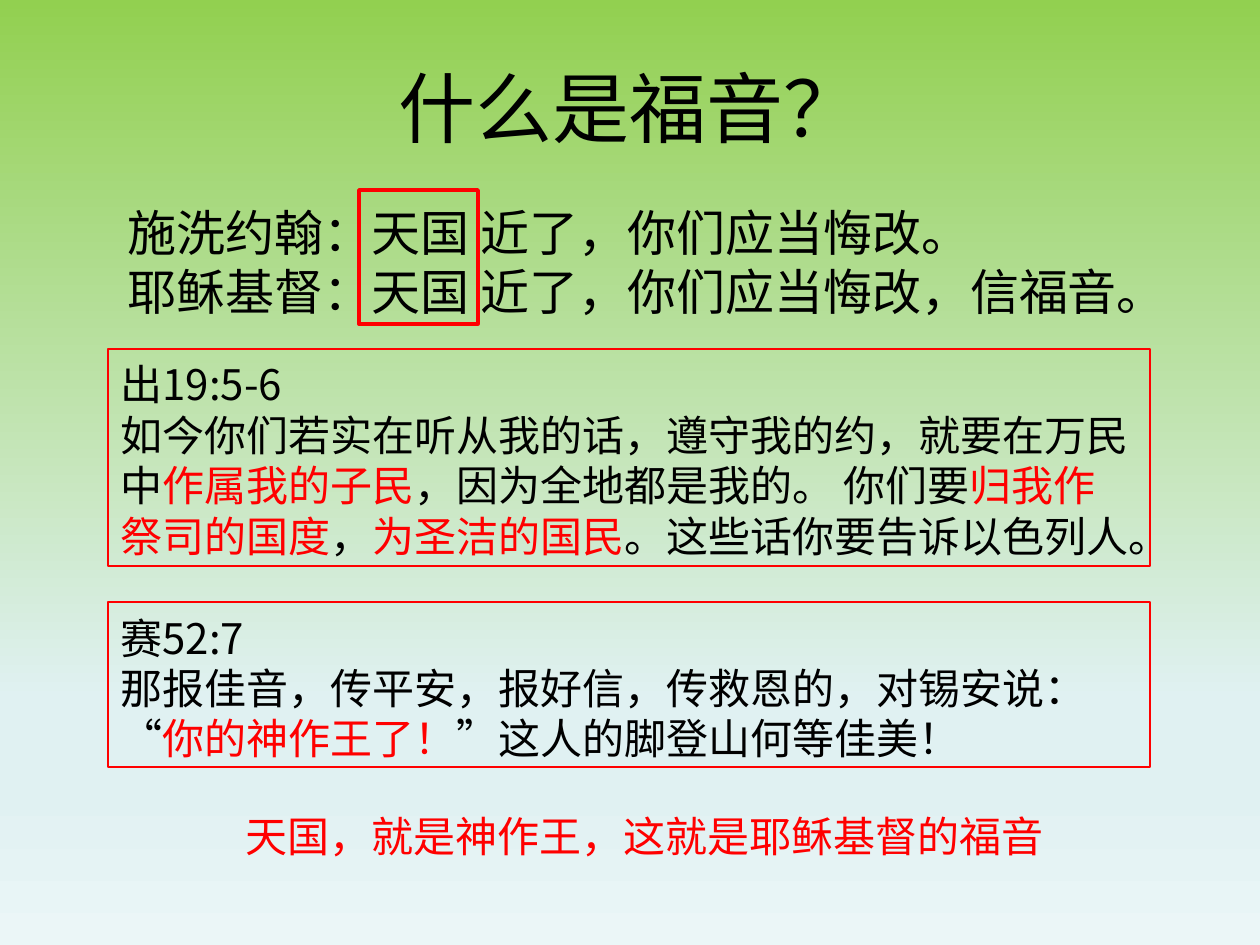
from dataclasses import dataclass

from lxml import etree
from pptx import Presentation
from pptx.dml.color import RGBColor
from pptx.enum.shapes import MSO_SHAPE
from pptx.enum.text import MSO_ANCHOR, PP_ALIGN
from pptx.oxml.ns import qn
from pptx.shapes.autoshape import Shape
from pptx.slide import Slide
from pptx.util import Emu, Pt

RECTANGLE = MSO_SHAPE.RECTANGLE
TOP, MIDDLE = MSO_ANCHOR.TOP, MSO_ANCHOR.MIDDLE
LEFT, CENTER = PP_ALIGN.LEFT, PP_ALIGN.CENTER

BLACK = RGBColor(0x00, 0x00, 0x00)
RED = RGBColor(0xFF, 0x00, 0x00)
GREEN = RGBColor(0x92, 0xD0, 0x50)
PALE_BLUE = RGBColor(0xE0, 0xF1, 0xF2)
ICE = RGBColor(0xEB, 0xF6, 0xF7)
BACKGROUND_STOPS = [(0, GREEN), (74, PALE_BLUE), (83, PALE_BLUE), (100, ICE)]

FONT = "Noto Sans CJK SC"
LINE_HEIGHT = 1.2
EMU_PER_PX = 914400 / 126


@dataclass(frozen=True)
class Box:
    left: int
    top: int
    width: int
    height: int


@dataclass(frozen=True)
class Verse:
    """A framed quotation; every second part of the passage is stressed."""
    box: Box
    reference: str
    passage: list[str]


VERSES = [
    Verse(Box(108, 349, 1042, 217), "出19:5-6", [
        "如今你们若实在听从我的话，遵守我的约，就要在万民中",
        "作属我的子民", "，因为全地都是我的。 你们要",
        "归我作祭司的国度", "，",
        "为圣洁的国民", "。这些话你要告诉以色列人。"]),
    Verse(Box(108, 602, 1042, 165), "赛52:7", [
        "那报佳音，传平安，报好信，传救恩的，对锡安说：“",
        "你的神作王了！", "”这人的脚登山何等佳美！"]),
]


def px(length: int) -> Emu:
    return Emu(round(length * EMU_PER_PX))


def place(box: Box) -> tuple[Emu, Emu, Emu, Emu]:
    return px(box.left), px(box.top), px(box.width), px(box.height)


def write(shape: Shape, paragraphs: list[list[str]], *, size: int,
          color: RGBColor = BLACK, stress: RGBColor = RED,
          align: PP_ALIGN = LEFT, anchor: MSO_ANCHOR = TOP,
          inset: int = 10, fixed_lines: bool = True) -> None:
    """Fill a shape with paragraphs whose runs alternate color and stress."""
    frame = shape.text_frame
    frame.word_wrap = True
    frame.vertical_anchor = anchor
    frame.margin_top = px(inset)
    for index, parts in enumerate(paragraphs):
        paragraph = frame.paragraphs[0] if index == 0 else frame.add_paragraph()
        paragraph.alignment = align
        if fixed_lines:
            paragraph.line_spacing = Pt(size * LINE_HEIGHT)
        for number, part in enumerate(parts):
            run = paragraph.add_run()
            run.text = part
            run.font.size = Pt(size)
            run.font.name = FONT
            run.font.color.rgb = stress if number % 2 else color
            properties = run._r.get_or_add_rPr()
            properties.set("lang", "zh-CN")
            latin = properties.find(qn("a:latin"))
            east_asian = etree.Element(qn("a:ea"), typeface=FONT)
            latin.addnext(east_asian)


def add_text(slide: Slide, box: Box) -> Shape:
    return slide.shapes.add_textbox(*place(box))


def add_frame(slide: Slide, box: Box, line_width: float) -> Shape:
    frame = slide.shapes.add_shape(RECTANGLE, *place(box))
    frame.shadow.inherit = False
    frame.fill.background()
    frame.line.color.rgb = RED
    frame.line.width = Pt(line_width)
    return frame


def paint_background(slide: Slide) -> None:
    fill = slide.background.fill
    fill.gradient()
    fill.gradient_angle = 270
    stops = slide.background._cSld.find(".//" + qn("a:gsLst"))
    for stop in list(stops):
        stops.remove(stop)
    for percent, color in BACKGROUND_STOPS:
        stop = etree.SubElement(stops, qn("a:gs"), pos=str(percent * 1000))
        etree.SubElement(stop, qn("a:srgbClr"), val=str(color))


def main() -> None:
    presentation = Presentation()
    presentation.slide_width = px(1260)
    presentation.slide_height = px(945)
    slide = presentation.slides.add_slide(presentation.slide_layouts[6])
    paint_background(slide)

    # Title
    title = add_text(slide, Box(63, 38, 1134, 137))
    write(title, [["什么是福音？"]], size=44, align=CENTER, anchor=MIDDLE,
          inset=6, fixed_lines=False)

    # The two proclamations
    proclamations = add_text(slide, Box(115, 175, 1134, 165))
    write(proclamations, [["施洗约翰：天国 近了，你们应当悔改。"],
                          ["耶稣基督：天国 近了，你们应当悔改，信福音。"]],
          size=28, inset=28)

    # Framed verses
    for verse in VERSES:
        frame = add_frame(slide, verse.box, 0.75)
        write(frame, [[verse.reference], verse.passage], size=24)

    # Frame around the shared word
    add_frame(slide, Box(359, 190, 119, 134), 2)

    # Conclusion
    conclusion = add_text(slide, Box(233, 801, 853, 63))
    write(conclusion, [["天国，就是神作王，这就是耶稣基督的福音"]],
          size=24, color=RED)

    presentation.save("out.pptx")


if __name__ == "__main__":
    main()
